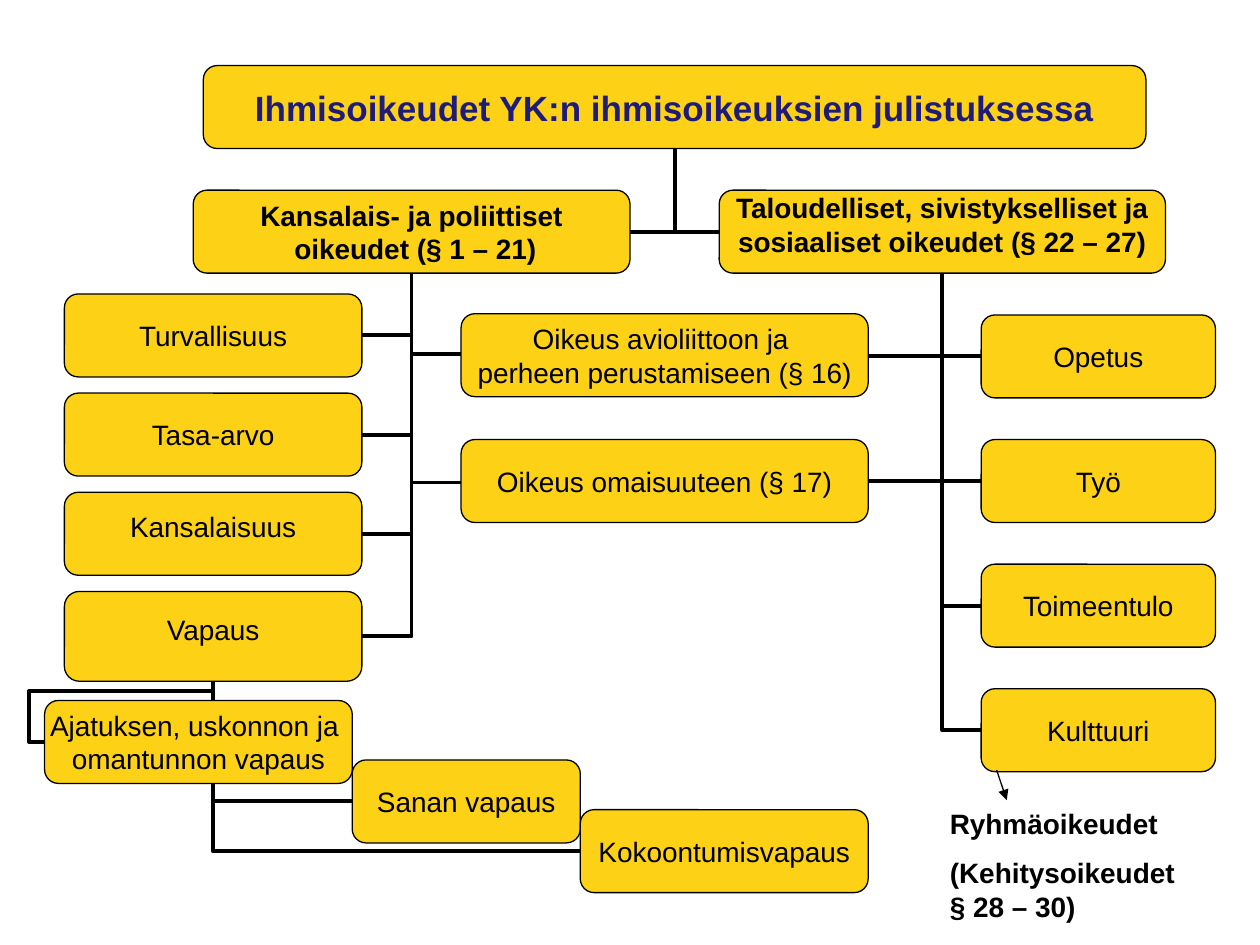
from lxml import etree
from pptx import Presentation
from pptx import util as u
from pptx.dml.color import RGBColor
from pptx.enum import shapes, text
from pptx.oxml.ns import qn

Pt = u.Pt
GOLD = RGBColor(0xFC, 0xD1, 0x16)
NAVY = RGBColor(0x1E, 0x1C, 0x77)
BLACK = RGBColor(0, 0, 0)
FONT = "Arial"
HIGH = 47.4


class Chart:
    def __init__(self, slide):
        self.slide = slide

    def label(self, para, words, size=16, bold=False, color=BLACK):
        for i, row in enumerate(words.split("\n")):
            if i:
                para.add_line_break()
            run = para.add_run()
            run.text = row
            run.font.name = FONT
            run.font.size = Pt(size)
            run.font.bold = bold
            run.font.color.rgb = color

    def box(self, words, x, y, w, h=HIGH, lift=0, **look):
        """Add a rounded box; lift is the bottom inset that raises its text."""
        box = self.slide.shapes.add_shape(
            shapes.MSO_SHAPE.ROUNDED_RECTANGLE, Pt(x), Pt(y), Pt(w), Pt(h))
        box.shadow.inherit = False
        box.fill.solid()
        box.fill.fore_color.rgb = GOLD
        box.line.color.rgb = BLACK
        box.line.width = Pt(0.75)
        frame = box.text_frame
        frame.word_wrap = False
        frame.vertical_anchor = text.MSO_ANCHOR.MIDDLE
        frame.margin_left = frame.margin_right = frame.margin_top = 0
        frame.margin_bottom = Pt(lift)
        para = frame.paragraphs[0]
        para.alignment = text.PP_ALIGN.CENTER
        self.label(para, words, **look)

    def line(self, x1, y1, x2, y2, width=2.25, arrow=False):
        line = self.slide.shapes.add_connector(
            shapes.MSO_CONNECTOR.STRAIGHT, Pt(x1), Pt(y1), Pt(x2), Pt(y2))
        line.line.color.rgb = BLACK
        line.line.width = Pt(width)
        props = line.element.spPr
        if arrow:
            etree.SubElement(props.find(qn("a:ln")), qn("a:tailEnd"), type="triangle")
        etree.SubElement(props, qn("a:effectLst"))
        return line

    def bend(self, x1, y1, x2, y2, kind="bentConnector2", **adjust):
        """Add an elbow that leaves its start sideways and ends upright."""
        geom = self.line(x1, y1, x2, y2).element.spPr.find(qn("a:prstGeom"))
        geom.set("prst", kind)
        if adjust:
            guides = geom.find(qn("a:avLst"))
            if guides is None:
                guides = etree.SubElement(geom, qn("a:avLst"))
            for name, value in adjust.items():
                etree.SubElement(guides, qn("a:gd"), name=name, fmla=f"val {value}")

    def note(self, rows, x, y, w, h, gap):
        box = self.slide.shapes.add_textbox(Pt(x), Pt(y), Pt(w), Pt(h))
        frame = box.text_frame
        frame.word_wrap = True
        frame.auto_size = text.MSO_AUTO_SIZE.SHAPE_TO_FIT_TEXT
        for i, row in enumerate(rows):
            para = frame.add_paragraph() if i else frame.paragraphs[0]
            if i:
                para.space_before = Pt(gap)
            self.label(para, row, bold=True)


def main():
    deck = Presentation()
    deck.slide_width, deck.slide_height = Pt(720), Pt(540)
    chart = Chart(deck.slides.add_slide(deck.slide_layouts[6]))

    half = HIGH / 2
    top, head = 37.5, 108.7
    root, civil, social, free = 385.5, 235.2, 538.5, 121.6
    left, side = 36.8, 170
    mid, span = 263.5, 232.6
    right, wing = 560.7, 133.9
    base = head + HIGH
    needs = [(name, 180 + 71.2 * i) for i, name in enumerate(
        ["Opetus", "Työ", "Toimeentulo", "Kulttuuri"])]
    rights = [(name, 168 + 56.67 * i, h, lift) for i, (name, h, lift) in enumerate([
        ("Turvallisuus", HIGH, 0), ("Tasa-arvo", HIGH, 0),
        ("Kansalaisuus", HIGH, 8.5), ("Vapaus", 51.3, 8.5)])]
    shared = [("Oikeus avioliittoon ja \nperheen perustamiseen (§ 16)", 179.3),
              ("Oikeus omaisuuteen (§ 17)", 251.2)]
    freedoms = [("Ajatuksen, uskonnon ja \nomantunnon vapaus", 25.5, 400.3, 175.8),
                ("Sanan vapaus", 201.3, 434.3, 130.3),
                ("Kokoontumisvapaus", 331.6, 462.7, 164.5)]

    # Elbows lie behind the boxes
    foot = rights[-1][1] + rights[-1][2]
    x, y = freedoms[0][1:3]
    chart.bend(x, y + half, free, foot, "bentConnector4", adj1=-9300, adj2=83900)
    for _, x, y, _ in freedoms[1:]:
        chart.bend(x, y + half, free, foot)
    for _, y in needs:
        chart.bend(right, y + half, social, base)
    for _, y in needs[:2]:
        chart.bend(mid + span, y + half, social, base)
    for _, y, h, _ in rights:
        chart.bend(left + side, y + h / 2, civil, base)
    for x in (411, 360):
        chart.bend(x, head + half, root, top + HIGH)

    chart.box("Ihmisoikeudet YK:n ihmisoikeuksien julistuksessa",
              116.2, top, 538.6, size=20, bold=True, color=NAVY)
    chart.box("Kansalais- ja poliittiset\n oikeudet (§ 1 – 21)",
              110.4, head, 249.6, bold=True)
    chart.box("Taloudelliset, sivistykselliset ja\nsosiaaliset oikeudet (§ 22 – 27)",
              411, head, 255, lift=8.5, bold=True)
    for name, y, h, lift in rights:
        chart.box(name, left, y, side, h, lift)
    for name, y in shared:
        chart.box(name, mid, y, span)
    for name, y in needs:
        chart.box(name, right, y, wing)
    for name, x, y, w in freedoms:
        chart.box(name, x, y, w)

    for y in (202.2, 275.7):
        chart.line(mid, y, civil, y)
    chart.line(569.5, 440, 575.3, 457.2, width=0.75, arrow=True)
    chart.note(["Ryhmäoikeudet", "(Kehitysoikeudet \n§ 28 – 30)"],
               535.7, 457.2, 184.3, 74.9, gap=9)
    deck.save("out.pptx")


if __name__ == "__main__":
    main()
